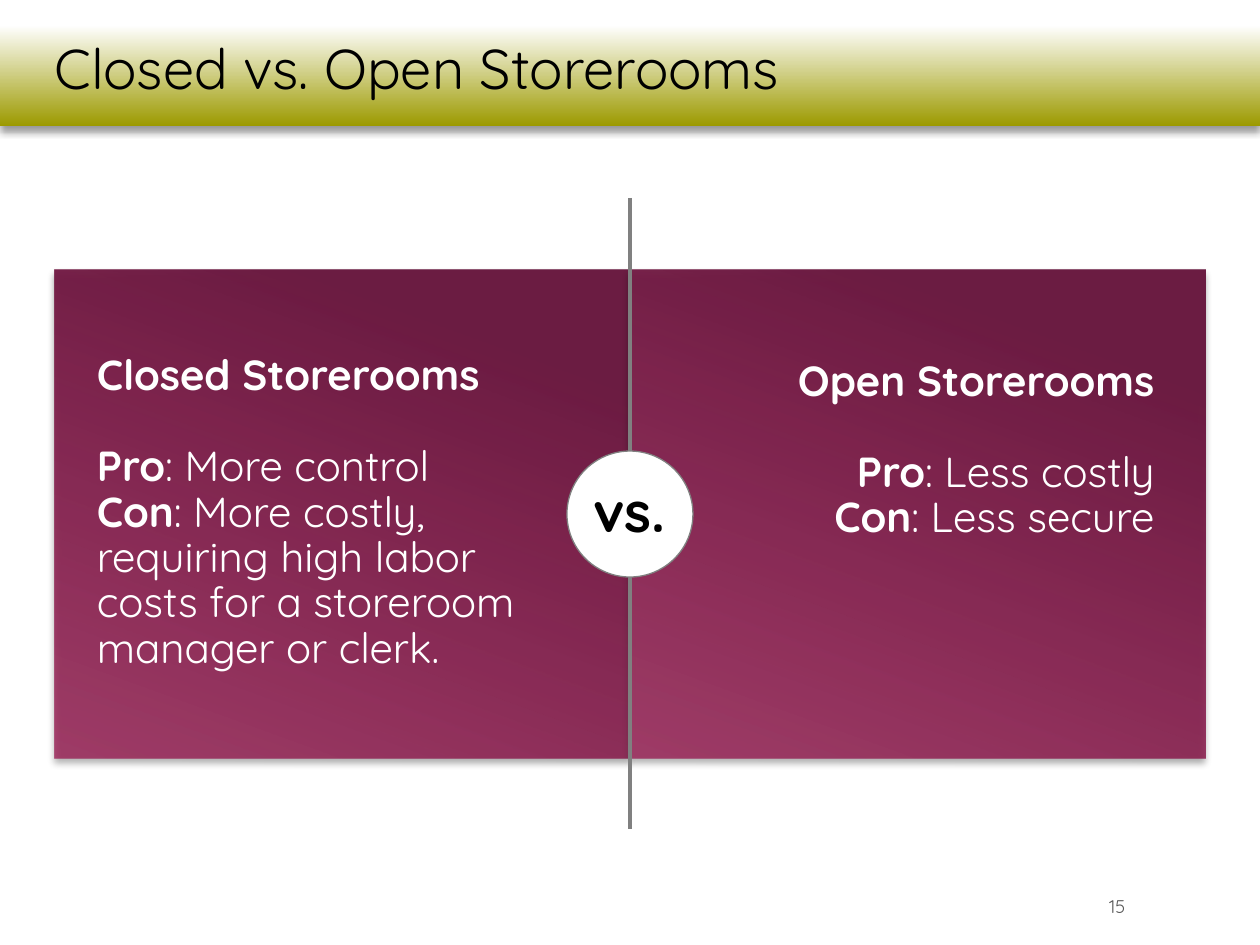
"""Build the slide comparing closed and open storerooms."""
from dataclasses import dataclass
from typing import NamedTuple

from lxml import etree
from pptx import Presentation, util as u
from pptx.dml.color import RGBColor
from pptx.enum import shapes, text
from pptx.oxml import ns


@dataclass(frozen=True)
class Theme:
    """Colours, type sizes and font of the slide."""
    font: str = "Quicksand"
    black: str = "000000"
    white: str = "FFFFFF"
    gray: str = "808080"
    number: str = "595959"
    olive: str = "9C9A00"
    plum: str = "6B1C42"
    berry: str = "97124C"
    title_size: float = 32
    body_size: float = 24
    number_size: float = 10.5


class Area(NamedTuple):
    """Place and size in hundredths of the slide's width and height."""
    left: float
    top: float
    width: float
    height: float


class Stop(NamedTuple):
    """A gradient stop, with position and opacity in percent."""
    position: int
    color: str
    opacity: int = 100


class Run(NamedTuple):
    """A piece of text in one weight."""
    words: str
    bold: bool = False


class Storeroom(NamedTuple):
    """One side of the comparison."""
    panel_left: float
    text_area: Area
    align: text.PP_ALIGN
    name: str
    pro: str
    con: str


THEME = Theme()
WIDTH, HEIGHT = u.Inches(10), u.Inches(7.5)
PANEL_TOP, PANEL_WIDTH, PANEL_HEIGHT = 28.53, 45.7, 51.73
LEFT, RIGHT, CENTER = text.PP_ALIGN.LEFT, text.PP_ALIGN.RIGHT, text.PP_ALIGN.CENTER
STOREROOMS = (
    Storeroom(50 - PANEL_WIDTH, Area(6.7, 36.67, 38.3, 35.33), LEFT, "Closed Storerooms", "More control",
              "More costly, requiring high labor costs for a storeroom manager or clerk."),
    Storeroom(50, Area(58.4, 37.33, 34.2, 20.8), RIGHT, "Open Storerooms", "Less costly", "Less secure"),
)


def place(area: Area) -> tuple:
    """Turn an area into slide lengths."""
    return (round(WIDTH * area.left / 100), round(HEIGHT * area.top / 100),
            round(WIDTH * area.width / 100), round(HEIGHT * area.height / 100))


def write(shape, paragraphs: list, *, size: float, color: str, align=LEFT, spacing: float = 1,
          gap: float = 0, wrap: bool = True, grow: bool = False) -> None:
    """Fill a shape with paragraphs of runs, with a gap after the first one."""
    frame = shape.text_frame
    frame.word_wrap = wrap
    frame.auto_size = text.MSO_AUTO_SIZE.SHAPE_TO_FIT_TEXT if grow else text.MSO_AUTO_SIZE.NONE
    frame.vertical_anchor = text.MSO_ANCHOR.MIDDLE
    for index, runs in enumerate(paragraphs):
        paragraph = frame.add_paragraph() if index else frame.paragraphs[0]
        paragraph.alignment, paragraph.line_spacing = align, spacing
        paragraph.space_before = u.Pt(gap if index == 1 else 0)
        for words, bold in runs:
            run = paragraph.add_run()
            run.text = words
            run.font.name, run.font.size, run.font.bold = THEME.font, u.Pt(size), bold
            run.font.color.rgb = RGBColor.from_string(color)


def add_gradient_box(slide, area: Area, stops: tuple, angle: int):
    """Add a rectangle with a two-stop gradient and a soft shadow below."""
    shape = slide.shapes.add_shape(shapes.MSO_SHAPE.RECTANGLE, *place(area))
    shape.line.fill.background()
    shape.fill.gradient()
    shape.fill.gradient_angle = 360 - angle
    for target, stop in zip(shape.fill.gradient_stops, stops):
        target.position = stop.position / 100
        target.color.rgb = RGBColor.from_string(stop.color)
    for color, stop in zip(shape._element.spPr.xpath(".//a:gs/a:srgbClr"), stops):
        if stop.opacity < 100:
            etree.SubElement(color, ns.qn("a:alpha"), val=str(stop.opacity * 1000))
    effects = etree.SubElement(shape._element.spPr, ns.qn("a:effectLst"))
    shadow = etree.SubElement(effects, ns.qn("a:outerShdw"), blurRad=str(u.Pt(4)), dist=str(u.Pt(3)),
                              dir="5400000", algn="t", rotWithShape="0")
    color = etree.SubElement(shadow, ns.qn("a:srgbClr"), val=THEME.black)
    etree.SubElement(color, ns.qn("a:alpha"), val="40000")
    return shape


def add_title(slide, words: str) -> None:
    """Set the title on its gradient band."""
    band = add_gradient_box(slide, Area(0, 0, 100, 13.33), (Stop(20, THEME.white), Stop(100, THEME.olive)), 90)
    title = slide.shapes.title
    title._element.addprevious(band._element)
    title.left, title.top, title.width, title.height = place(Area(3.33, 0, 93.33, 13.33))
    title.text_frame.margin_top = u.Inches(0.22)
    write(title, [[Run(words)]], size=THEME.title_size, color=THEME.black, spacing=0.8)


def add_divider(slide) -> None:
    """Draw the vertical line between the two sides."""
    left, top, _, height = place(Area(50, 20.93, 0, 66.8))
    line = slide.shapes.add_connector(shapes.MSO_CONNECTOR.STRAIGHT, left, top, left, top + height)
    line.line.color.rgb = RGBColor.from_string(THEME.gray)
    line.line.width = u.Pt(2)
    etree.SubElement(line._element.spPr, ns.qn("a:effectLst"))


def add_badge(slide, words: str) -> None:
    """Draw the round label in the middle of the divider."""
    badge = slide.shapes.add_shape(shapes.MSO_SHAPE.OVAL, *place(Area(45, 47.73, 10, 13.33)))
    badge.shadow.inherit = False
    badge.fill.solid()
    badge.fill.fore_color.rgb = RGBColor.from_string(THEME.white)
    badge.line.color.rgb = RGBColor.from_string(THEME.gray)
    badge.line.width = u.Pt(0.75)
    write(badge, [[Run(words, True)]], size=THEME.title_size, color=THEME.black, align=CENTER,
          spacing=0.9, wrap=False)


def add_storeroom_text(slide, room: Storeroom) -> None:
    """Write the name, advantage and drawback of a storeroom."""
    paragraphs = [[Run(room.name, True)],
                  [Run("Pro", True), Run(f": {room.pro}")],
                  [Run("Con", True), Run(f": {room.con}")]]
    write(slide.shapes.add_textbox(*place(room.text_area)), paragraphs, size=THEME.body_size,
          color=THEME.white, align=room.align, spacing=0.9, gap=26, grow=True)


def main() -> None:
    """Build and save the presentation."""
    presentation = Presentation()
    presentation.slide_width, presentation.slide_height = WIDTH, HEIGHT
    slide = presentation.slides.add_slide(presentation.slide_layouts[5])
    add_title(slide, "Closed vs. Open Storerooms")
    number = slide.shapes.add_textbox(*place(Area(78.5, 93.2, 11.8, 5.33)))
    write(number, [[Run("15")]], size=THEME.number_size, color=THEME.number, align=RIGHT)
    for room in STOREROOMS:
        add_gradient_box(slide, Area(room.panel_left, PANEL_TOP, PANEL_WIDTH, PANEL_HEIGHT),
                         (Stop(17, THEME.plum), Stop(100, THEME.berry, 73)), 110)
    add_divider(slide)
    for room in STOREROOMS:
        add_storeroom_text(slide, room)
    add_badge(slide, "vs.")
    presentation.save("out.pptx")


if __name__ == "__main__":
    main()
